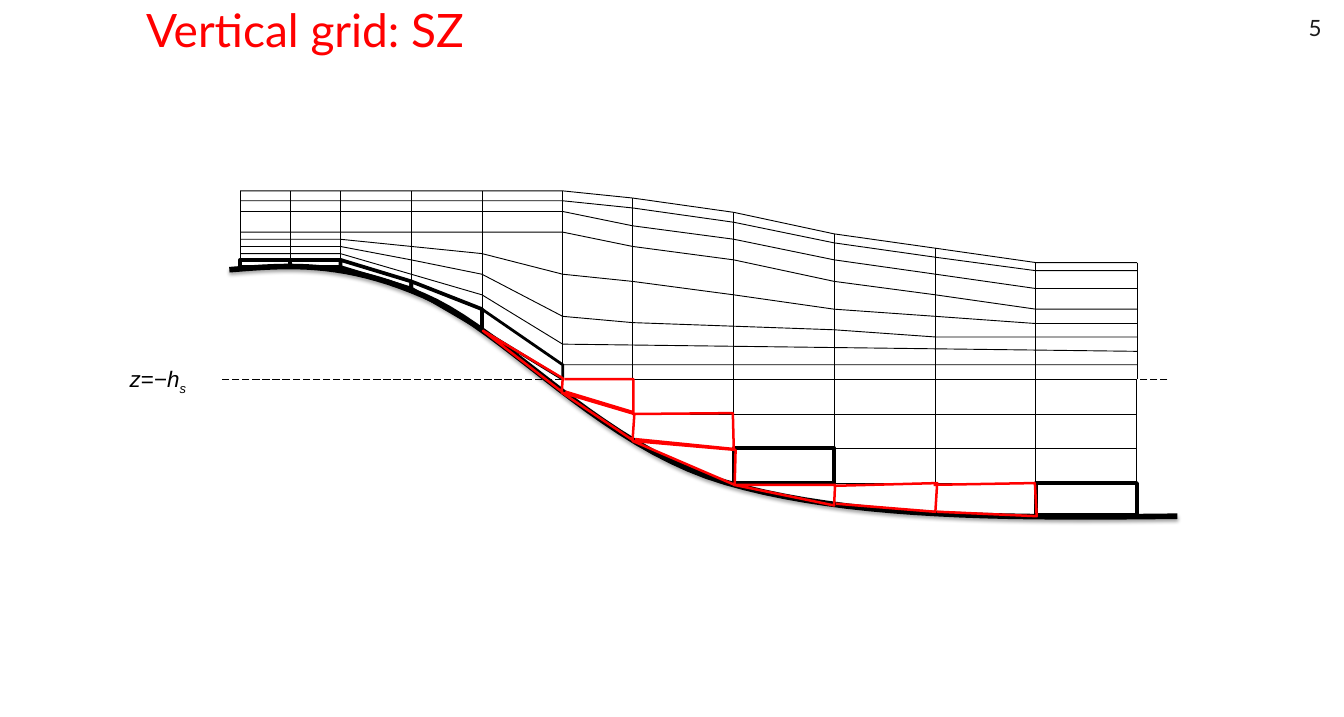
"""Build the slide that shows an SZ vertical grid above a sloping sea bed."""
from lxml import etree
from pptx import Presentation
from pptx.dml.color import RGBColor
from pptx.enum.dml import MSO_LINE
from pptx.enum.shapes import MSO_CONNECTOR, MSO_SHAPE
from pptx.enum.text import MSO_ANCHOR as ANCHOR, PP_ALIGN as ALIGN
from pptx.oxml import parse_xml
from pptx.oxml.ns import nsdecls, qn
from pptx.util import Cm, Pt

COLOURS = {"black": "000000", "red": "FF0000", "number": "1C1C1C"}
THIN, RED_WIDTH, HEAVY, BED_WIDTH = 0.75, 2, 3, 4.5


def length(inches):
    return Cm(inches * 2.54)


def add_outline(points, colour="black", width=THIN, closed=False):
    corners = [(length(x), length(y)) for x, y in points]
    builder = slide.shapes.build_freeform(*corners[0])
    builder.add_line_segments(corners[1:], close=closed)
    shape = builder.convert_to_shape()
    shape.shadow.inherit = False
    shape.fill.background()
    shape.line.color.rgb = RGBColor.from_string(COLOURS[colour])
    shape.line.width = Pt(width)
    return shape


presentation = Presentation()
presentation.slide_width, presentation.slide_height = length(15), length(8)
slide = presentation.slides.add_slide(presentation.slide_layouts[6])

bed_curve = [
    (2.56, 3.01), (3.19, 2.96), (3.81, 2.9), (4.73, 3.3), (5.65, 3.69),
    (6.69, 4.97), (8.09, 5.38), (9.49, 5.79), (11.32, 5.78), (13.14, 5.76),
]
STEPS = 20
bed_points = [bed_curve[0]]
for first in range(0, len(bed_curve) - 1, 3):
    controls = bed_curve[first:first + 4]
    for step in range(1, STEPS + 1):
        t = step / STEPS
        weights = ((1 - t) ** 3, 3 * t * (1 - t) ** 2, 3 * t ** 2 * (1 - t), t ** 3)
        bed_points.append(tuple(
            sum(weight * control[axis] for weight, control in zip(weights, controls))
            for axis in (0, 1)
        ))
sea_bed = add_outline(bed_points, width=BED_WIDTH)
sea_bed._element.spPr.find(qn("a:effectLst")).append(parse_xml(
    f'<a:outerShdw {nsdecls("a")} blurRad="40000" dist="23000" dir="5400000" rotWithShape="0">'
    f'<a:srgbClr val="{COLOURS["black"]}"><a:alpha val="35000"/></a:srgbClr></a:outerShdw>'
))

stations = [2.68, 3.24, 3.8, 4.59, 5.38, 6.28, 7.06, 8.19, 9.31, 10.44, 11.56, 12.69]
surface = [2.13] * 6 + [2.21, 2.37, 2.61, 2.77, 2.93, 2.93]
bottom_layer = [2.9, 2.9, 2.9, 3.14, 3.45] + [4.07] * 7
layers = [
    surface,
    [2.24] * 6 + [2.32, 2.48, 2.71, 2.87, 3.02, 3.02],
    [2.36] * 6 + [2.52, 2.67, 2.9, 3.06, 3.22, 3.22],
    [2.59] * 6 + [2.75, 2.9, 3.14, 3.29, 3.45, 3.45],
    [2.67] * 3 + [2.75, 2.83, 3.06, 3.14, 3.29, 3.45, 3.53, 3.61, 3.61],
    [2.75] * 3 + [2.9, 3.06, 3.53, 3.6, None, 3.68, 3.76, 3.76, 3.76],
    [2.83] * 3 + [3.06, 3.29, 3.84] + [None] * 5 + [3.92],
    bottom_layer,
]
for depths in layers:
    add_outline([(x, y) for x, y in zip(stations, depths) if y is not None])

level = 4.23
column_feet = [2.98, 2.98, 2.98, 3.22, 3.68, 4.3, 4.3] + [level] * 5
lines = [(x, foot, x, top, None) for x, foot, top in zip(stations, column_feet, surface)]
lines.append((13.03, level, 2.45, level, MSO_LINE.LONG_DASH))
for *ends, dash in lines:
    connector = slide.shapes.add_connector(MSO_CONNECTOR.STRAIGHT, *map(length, ends))
    connector.line.color.rgb = RGBColor.from_string(COLOURS["black"])
    connector.line.width = Pt(THIN)
    if dash:
        connector.line.dash_style = dash
    etree.SubElement(connector._element.spPr, qn("a:effectLst"))

row_edges = [level, 4.62, 5, 5.39, 5.75]
first_columns = [6, 7, 7, 10]
heavy_cells = {(2, 7), (3, 10)}
for row, first_column in enumerate(first_columns):
    for column in range(first_column, len(stations) - 1):
        left, right = stations[column:column + 2]
        top, bottom = row_edges[row:row + 2]
        cell = slide.shapes.add_shape(
            MSO_SHAPE.RECTANGLE, *map(length, (left, top, right - left, bottom - top)))
        cell.shadow.inherit = False
        cell.fill.background()
        cell.line.color.rgb = RGBColor.from_string(COLOURS["black"])
        cell.line.width = Pt(HEAVY if (row, column) in heavy_cells else THIN)

bed_depths = [2.98, 2.98, 2.98, 3.22, 3.68, level]
for index, width in enumerate([HEAVY] * 4 + [2.25]):
    left, right = stations[index:index + 2]
    add_outline([
        (right, bed_depths[index + 1]), (right, bottom_layer[index + 1]),
        (left, bottom_layer[index]), (left, bed_depths[index]),
    ], width=width, closed=True)

red_triangles = [
    [(5.39, 3.69), (6.28, 4.22), (6.27, 4.37)],
    [(6.27, 4.38), (7.08, 4.62), (7.06, 4.91)],
    [(7.06, 4.92), (8.21, 5.02), (8.2, 5.41)],
    [(8.19, 5.41), (9.32, 5.41), (9.31, 5.64)],
]
red_open_cells = [
    [(6.3, 4.23), (7.07, 4.23), (7.07, 4.6), (6.31, 4.37)],
    [(7.06, 4.62), (8.18, 4.61), (8.19, 5.01), (7.09, 4.9)],
    [(9.33, 5.42), (10.46, 5.39), (10.44, 5.71), (9.33, 5.62)],
    [(10.42, 5.41), (11.55, 5.39), (11.57, 5.76), (10.46, 5.71)],
]
for outlines, closed in ((red_triangles, True), (red_open_cells, False)):
    for points in outlines:
        add_outline(points, "red", RED_WIDTH, closed)

title_format = {"name": "Lato", "size": Pt(37)}
number_format = {"name": "Lato", "size": Pt(18)}
label_format = {"name": "Arial", "size": Pt(18), "italic": True}
texts = [
    ((1.5, 0.09, 11.12, 0.61), (0.13, 0.07), ANCHOR.BOTTOM, ALIGN.LEFT, True, "red",
     [("Vertical grid: SZ", title_format)]),
    ((14, 0, 0.88, 0.53), (0.13, 0.07), ANCHOR.BOTTOM, ALIGN.RIGHT, True, "number",
     [("5", number_format)]),
    ((1.35, 4.03, 0.84, 0.4), (0.1, 0.05), ANCHOR.TOP, ALIGN.LEFT, False, "black",
     [("z", label_format), ("=−", label_format | {"italic": False}),
      ("h", label_format), ("s", label_format)]),
]
for box, (side, edge), anchor, alignment, wrap, colour, pieces in texts:
    frame = slide.shapes.add_textbox(*map(length, box)).text_frame
    frame_format = {
        "margin_left": length(side), "margin_right": length(side),
        "margin_top": length(edge), "margin_bottom": length(edge),
        "vertical_anchor": anchor, "word_wrap": wrap,
    }
    for name, value in frame_format.items():
        setattr(frame, name, value)
    paragraph = frame.paragraphs[0]
    paragraph.alignment = alignment
    for text, font_format in pieces:
        run = paragraph.add_run()
        run.text = text
        for name, value in font_format.items():
            setattr(run.font, name, value)
        run.font.color.rgb = RGBColor.from_string(COLOURS[colour])
        if text == "s":
            run._r.get_or_add_rPr().set("baseline", "-25000")

presentation.save("out.pptx")
